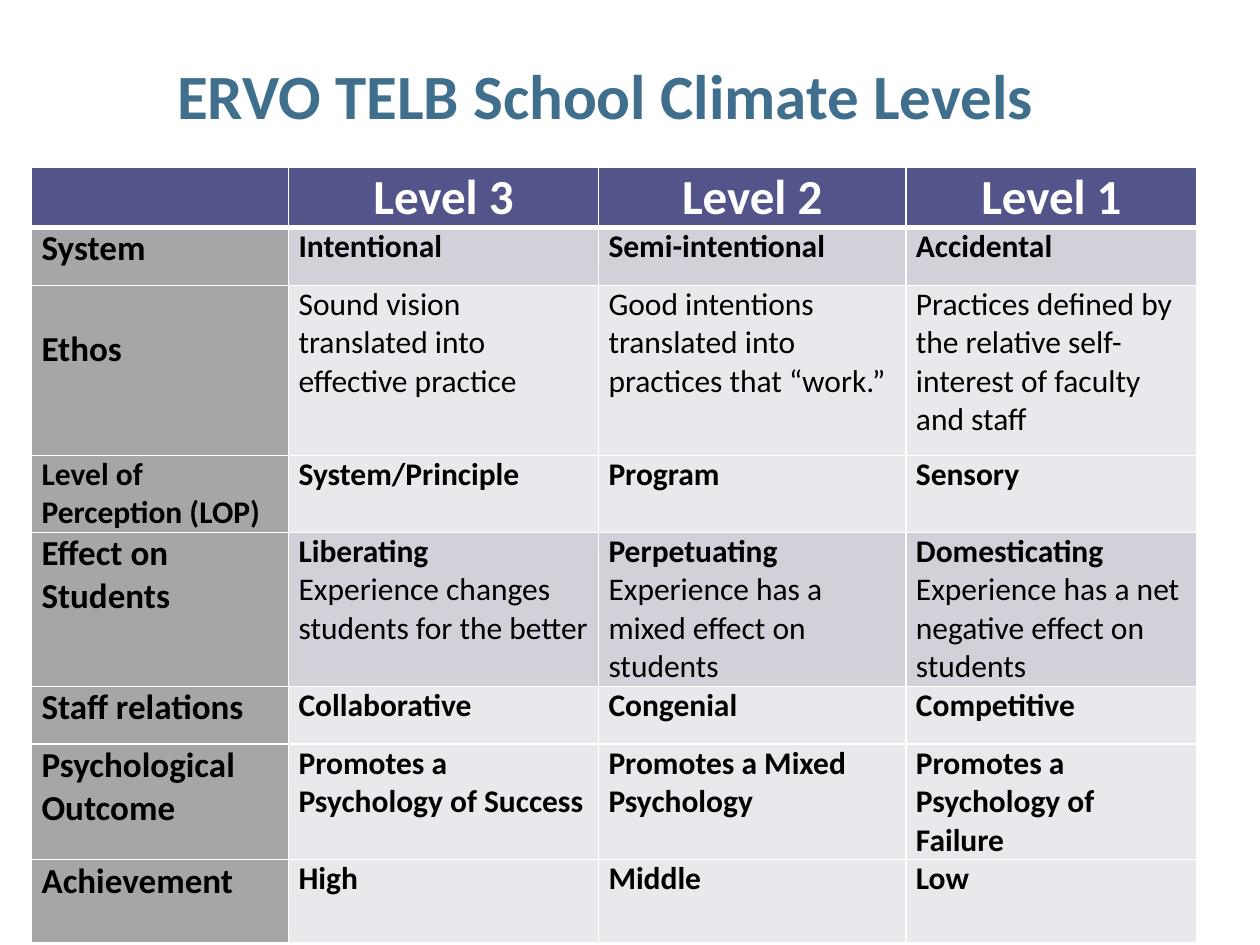
from lxml.etree import SubElement
from pptx import Presentation
from pptx.dml.color import RGBColor
from pptx.enum.text import MSO_ANCHOR, PP_ALIGN
from pptx.oxml.ns import qn
from pptx.util import Inches, Pt

FONT = "Calibri"
COLORS = {
    "title": "406F8D",
    "header": "53548A",
    "label": "A6A6A6",
    "dark_band": "D1D1DA",
    "light_band": "E9E9ED",
    "white": "FFFFFF",
    "black": "000000",
}
COL_WIDTHS = [2.04, 2.46, 2.44, 2.31]
HEADER = ["", "Level 3", "Level 2", "Level 1"]
HEADER_HEIGHT = 0.46
BLANK_LINE = 0.34

# height, band, label size, label, then one text per level
# ("*" starts a bold paragraph)
ROWS = [
    (0.46, "dark_band", 20, "*System",
     "*Intentional", "*Semi-intentional", "*Accidental"),
    (1.35, "light_band", 20, "*Ethos",
     "Sound vision translated into effective practice",
     "Good intentions translated into practices that “work.”",
     "Practices defined by the relative self-interest of faculty and staff"),
    (0.55, "light_band", 18, "*Level of Perception (LOP)",
     "*System/Principle", "*Program", "*Sensory"),
    (1.09, "dark_band", 20, "*Effect on Students",
     "*Liberating\nExperience changes students for the better",
     "*Perpetuating\nExperience has a mixed effect on students",
     "*Domesticating\nExperience has a net negative effect on students"),
    (0.46, "light_band", 20, "*Staff relations",
     "*Collaborative", "*Congenial", "*Competitive"),
    (0.82, "light_band", 20, "*Psychological\n*Outcome",
     "*Promotes a Psychology of Success",
     "*Promotes a Mixed Psychology",
     "*Promotes a Psychology of Failure"),
    (0.66, "light_band", 20, "*Achievement", "*High", "*Middle", "*Low"),
]


def rgb(name):
    return RGBColor.from_string(COLORS[name])


def write(tf, text, size, color, align=PP_ALIGN.LEFT):
    """Fill a text frame, one paragraph a line; a leading * means bold."""
    for i, line in enumerate(text.split("\n")):
        p = tf.add_paragraph() if i else tf.paragraphs[0]
        p.text = line.removeprefix("*")
        p.alignment = align
        p.font.name = FONT
        p.font.size = Pt(size)
        p.font.bold = line.startswith("*")
        p.font.color.rgb = rgb(color)


def set_borders(cell, top=1, bottom=1):
    """Draw white cell borders; must run before the cell is filled."""
    tc_pr = cell._tc.get_or_add_tcPr()
    for side, width in (("L", 1), ("R", 1), ("T", top), ("B", bottom)):
        ln = SubElement(tc_pr, qn(f"a:ln{side}"), w=str(Pt(width)))
        fill = SubElement(ln, qn("a:solidFill"))
        SubElement(fill, qn("a:srgbClr"), val=COLORS["white"])


def style_cell(cell, fill, **borders):
    cell.margin_left = cell.margin_right = Inches(0.08)
    cell.margin_top = cell.margin_bottom = 0
    set_borders(cell, **borders)
    cell.fill.solid()
    cell.fill.fore_color.rgb = rgb(fill)


def add_title(slide, text):
    box = slide.shapes.add_textbox(Inches(0.33), Inches(0.17), Inches(8.95), Inches(1.15))
    tf = box.text_frame
    tf.word_wrap = True
    tf.vertical_anchor = MSO_ANCHOR.MIDDLE
    write(tf, text, 36, "title", PP_ALIGN.CENTER)


def add_levels_table(slide):
    heights = [HEADER_HEIGHT] + [row[0] for row in ROWS]
    table = slide.shapes.add_table(
        len(heights), len(COL_WIDTHS), Inches(0.25), Inches(1.33),
        Inches(sum(COL_WIDTHS)), Inches(sum(heights))).table
    table.first_row = table.horz_banding = False
    for col, width in zip(table.columns, COL_WIDTHS):
        col.width = Inches(width)
    for row, height in zip(table.rows, heights):
        row.height = Inches(height)

    for c, text in enumerate(HEADER):
        cell = table.cell(0, c)
        style_cell(cell, "header", bottom=3)
        write(cell.text_frame, text and "*" + text, 28, "white", PP_ALIGN.CENTER)

    for r, (_, band, label_size, *texts) in enumerate(ROWS, start=1):
        for c, text in enumerate(texts):
            cell = table.cell(r, c)
            style_cell(cell, band if c else "label", top=3 if r == 1 else 1)
            write(cell.text_frame, text, 18 if c else label_size, "black")
            if text == "*Ethos":
                cell.margin_top = Inches(BLANK_LINE)


def main():
    prs = Presentation()
    prs.slide_width, prs.slide_height = Inches(10), Inches(7.5)
    slide = prs.slides.add_slide(prs.slide_layouts[6])
    add_levels_table(slide)
    add_title(slide, "*ERVO TELB School Climate Levels")
    prs.save("out.pptx")


if __name__ == "__main__":
    main()
